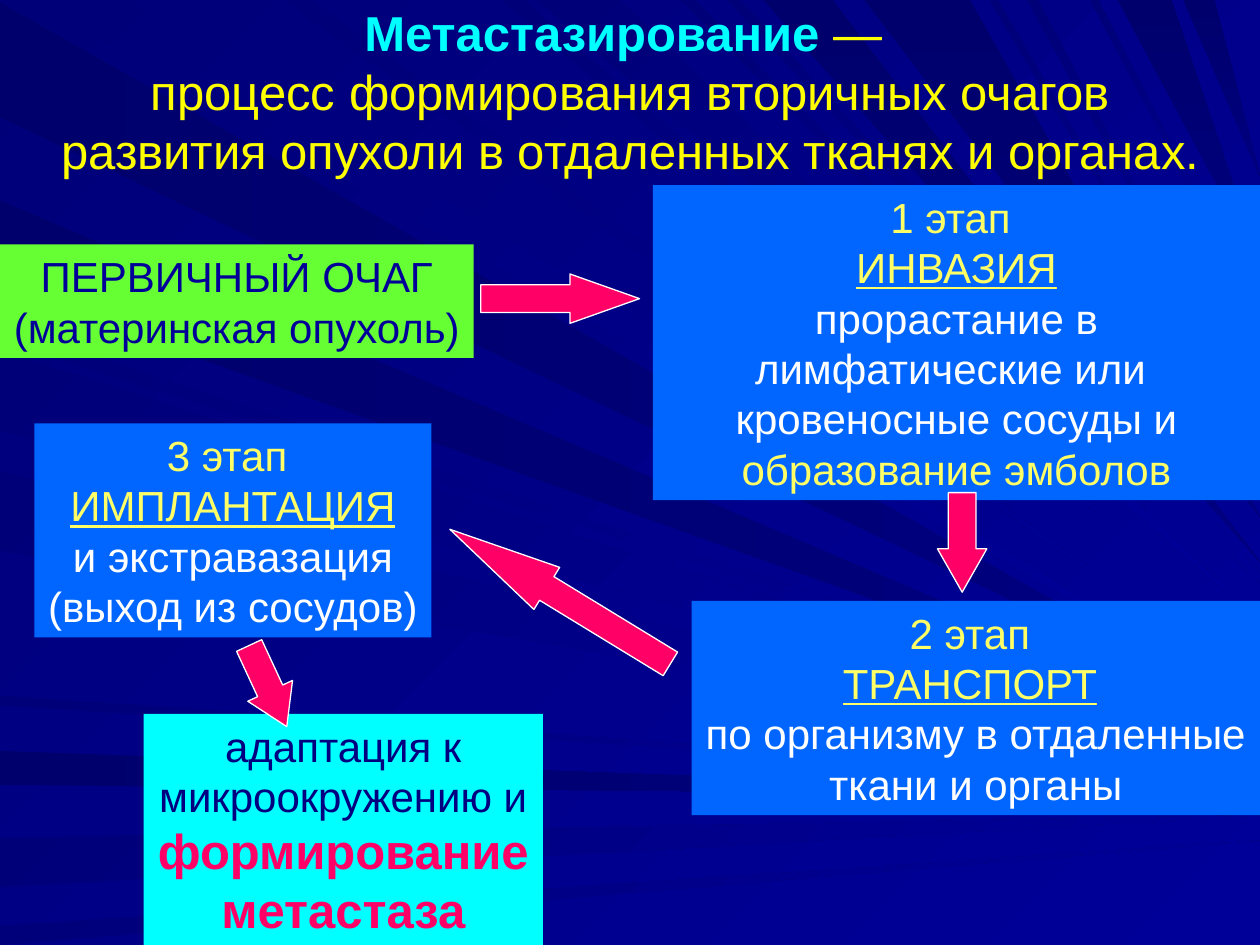
from pptx import Presentation
from pptx.dml.color import RGBColor
from pptx.enum.shapes import MSO_SHAPE as Preset
from pptx.enum.text import MSO_ANCHOR as Anchor, MSO_AUTO_SIZE as AutoSize, PP_ALIGN as Align
from pptx.util import Pt

FONT = "Arial"
TITLE_SIZE = 28
BODY_SIZE = 24
LINE_PITCH = 1.2
WIDTH, HEIGHT = 720, 540

INK = RGBColor.from_string("00006C")
DEEP_BLUE = RGBColor.from_string("000078")
NAVY = RGBColor.from_string("000080")
BLUE = RGBColor.from_string("000099")
AZURE = RGBColor.from_string("0066FF")
GREEN = RGBColor.from_string("66FF33")
CYAN = RGBColor.from_string("00FFFF")
CRIMSON = RGBColor.from_string("FF0066")
YELLOW = RGBColor.from_string("FFFF00")
PALE_YELLOW = RGBColor.from_string("FFFF66")
WHITE = RGBColor.from_string("FFFFFF")

RAY_UNIT = Pt(0.72)  # 1000 units across the slide
RIGHT_EDGE = 1000
# Each ray: where it starts and stops on its edge, and its height at the right edge
LEFT_DARK = [(2, 93, 570), (596, 623, 632), (159, 228, 585)]
LEFT_SOFT = [(665, 704, 647), (735, 750, 667), (258, 270, 589), (278, 342, 600),
             (374, 437, 606), (552, 560, 622)]
TOP_SOFT = [(26, 101, 563), (225, 247, 550), (398, 416, 518), (426, 492, 493),
            (540, 552, 463), (577, 588, 454), (785, 792, 357), (815, 824, 336),
            (865, 872, 254)]
TOP_DARK = [(606, 661, 446), (686, 770, 410), (887, 930, 210), (939, 964, 140)]

# A line is a list of runs: text, colour and, where needed, emphasis
TITLE = [
    [("Метастазирование ", CYAN, "bold"), ("— ", YELLOW)],
    [("процесс формирования вторичных очагов", YELLOW)],
    [("развития опухоли в отдаленных тканях и органах.", YELLOW)],
]
PRIMARY = [
    [("ПЕРВИЧНЫЙ ОЧАГ", BLUE)],
    [("(материнская опухоль)", BLUE)],
]
INVASION = [
    [("1 этап ", PALE_YELLOW)],
    [("ИНВАЗИЯ", PALE_YELLOW, "underline")],
    [("прорастание в лимфатические или ", WHITE)],
    [("кровеносные сосуды и", WHITE)],
    [("образование эмболов", PALE_YELLOW)],
]
TRANSPORT = [
    [("2 этап ", PALE_YELLOW)],
    [("ТРАНСПОРТ", PALE_YELLOW, "underline"), (" ", WHITE)],
    [("по организму в отдаленные", WHITE)],
    [("ткани и органы", WHITE)],
]
IMPLANTATION = [
    [("3 этап ", PALE_YELLOW)],
    [("ИМПЛАНТАЦИЯ", PALE_YELLOW, "underline")],
    [("и экстравазация", WHITE)],
    [("(выход из сосудов)", WHITE)],
]
METASTASIS = [
    [("адаптация к", NAVY)],
    [("микроокружению и", NAVY)],
    [("формирование", CRIMSON, "bold")],
    [("метастаза", CRIMSON, "bold")],
]


class SlideBuilder:
    def __init__(self, slide):
        self.slide = slide
        self.shapes = slide.shapes

    def solid(self, fill, color):
        fill.solid()
        fill.fore_color.rgb = color

    def gradient(self, fill, start, end, angle):
        """The angle runs clockwise from left to right."""
        fill.gradient()
        fill.gradient_angle = (360 - angle) % 360
        for stop, color in zip(fill.gradient_stops, (start, end)):
            stop.color.rgb = color

    def ray(self, corners, start, end, angle):
        outline = self.shapes.build_freeform(*corners[0], scale=RAY_UNIT)
        outline.add_line_segments(corners[1:], close=True)
        shape = outline.convert_to_shape()
        shape.shadow.inherit = False
        shape.line.fill.background()
        self.gradient(shape.fill, start, end, angle)

    def left_rays(self, rays, start, end, angle):
        for upper, lower, tip in rays:
            self.ray([(0, upper), (0, lower), (RIGHT_EDGE, tip)], start, end, angle)

    def top_rays(self, rays, start, end, angle):
        for near, far, tip in rays:
            self.ray([(near, 0), (far, 0), (RIGHT_EDGE, tip)], start, end, angle)

    def add_runs(self, paragraph, size, runs):
        paragraph.alignment = Align.CENTER
        paragraph.line_spacing = Pt(size * LINE_PITCH)
        for text, color, *emphasis in runs:
            run = paragraph.add_run()
            run.text = text
            font = run.font
            font.name, font.size, font.color.rgb = FONT, Pt(size), color
            font.bold = "bold" in emphasis
            font.underline = "underline" in emphasis

    def title(self, height, lines):
        title = self.shapes.title
        title.left, title.top, title.width, title.height = 0, 0, Pt(WIDTH), Pt(height)
        title.element.getparent().append(title.element)  # in front of the rays
        text_frame = title.text_frame
        text_frame.auto_size = AutoSize.NONE
        text_frame.vertical_anchor = Anchor.MIDDLE
        paragraph = text_frame.paragraphs[0]
        for index, runs in enumerate(lines):
            if index:
                paragraph.add_line_break()
            self.add_runs(paragraph, TITLE_SIZE, runs)

    def box(self, left, top, width, height, color, lines, wrap=False):
        shape = self.shapes.add_textbox(Pt(left), Pt(top), Pt(width), Pt(height))
        self.solid(shape.fill, color)
        text_frame = shape.text_frame
        text_frame.word_wrap = wrap
        for index, runs in enumerate(lines):
            paragraph = text_frame.add_paragraph() if index else text_frame.paragraphs[0]
            size = TITLE_SIZE if "bold" in runs[0] else BODY_SIZE
            self.add_runs(paragraph, size, runs)

    def arrow(self, left, top, length, rotation, head):
        """Draw an upward arrow, then turn it; head is relative to its width."""
        shape = self.shapes.add_shape(
            Preset.UP_ARROW, Pt(left), Pt(top), Pt(28.2), Pt(length))
        shape.rotation = rotation
        shape.adjustments[0] = 0.56
        shape.adjustments[1] = head
        shape.shadow.inherit = False
        self.solid(shape.fill, CRIMSON)
        shape.line.color.rgb = WHITE
        shape.line.width = Pt(0.75)


def main():
    presentation = Presentation()
    presentation.slide_width, presentation.slide_height = Pt(WIDTH), Pt(HEIGHT)
    title_only = presentation.slide_layouts[5]
    builder = SlideBuilder(presentation.slides.add_slide(title_only))

    builder.gradient(builder.slide.background.fill, DEEP_BLUE, BLUE, 45)
    builder.left_rays(LEFT_DARK, INK, NAVY, 0)
    builder.left_rays(LEFT_SOFT, DEEP_BLUE, BLUE, 45)
    builder.top_rays(TOP_SOFT, DEEP_BLUE, BLUE, 45)
    builder.top_rays(TOP_DARK, INK, NAVY, 90)

    builder.title(104, TITLE)
    builder.box(0, 139.7, 270.7, 64.8, GREEN, PRIMARY)
    builder.box(373, 105.8, 347, 180, AZURE, INVASION, wrap=True)
    builder.box(82.1, 408, 228.2, 132, CYAN, METASTASIS)
    builder.box(395.2, 343.4, 324.8, 122.4, AZURE, TRANSPORT)
    builder.box(19.7, 241.9, 226.8, 122.4, AZURE, IMPLANTATION)

    builder.arrow(306, 125.3, 90.7, 90, 1.41)
    builder.arrow(535.7, 281.5, 56.9, 180, 0.88)
    builder.arrow(306, 267.1, 147.6, 301.4, 2.3)
    builder.arrow(139, 366.5, 51.1, 155.1, 0.8)
    presentation.save("out.pptx")


if __name__ == "__main__":
    main()
